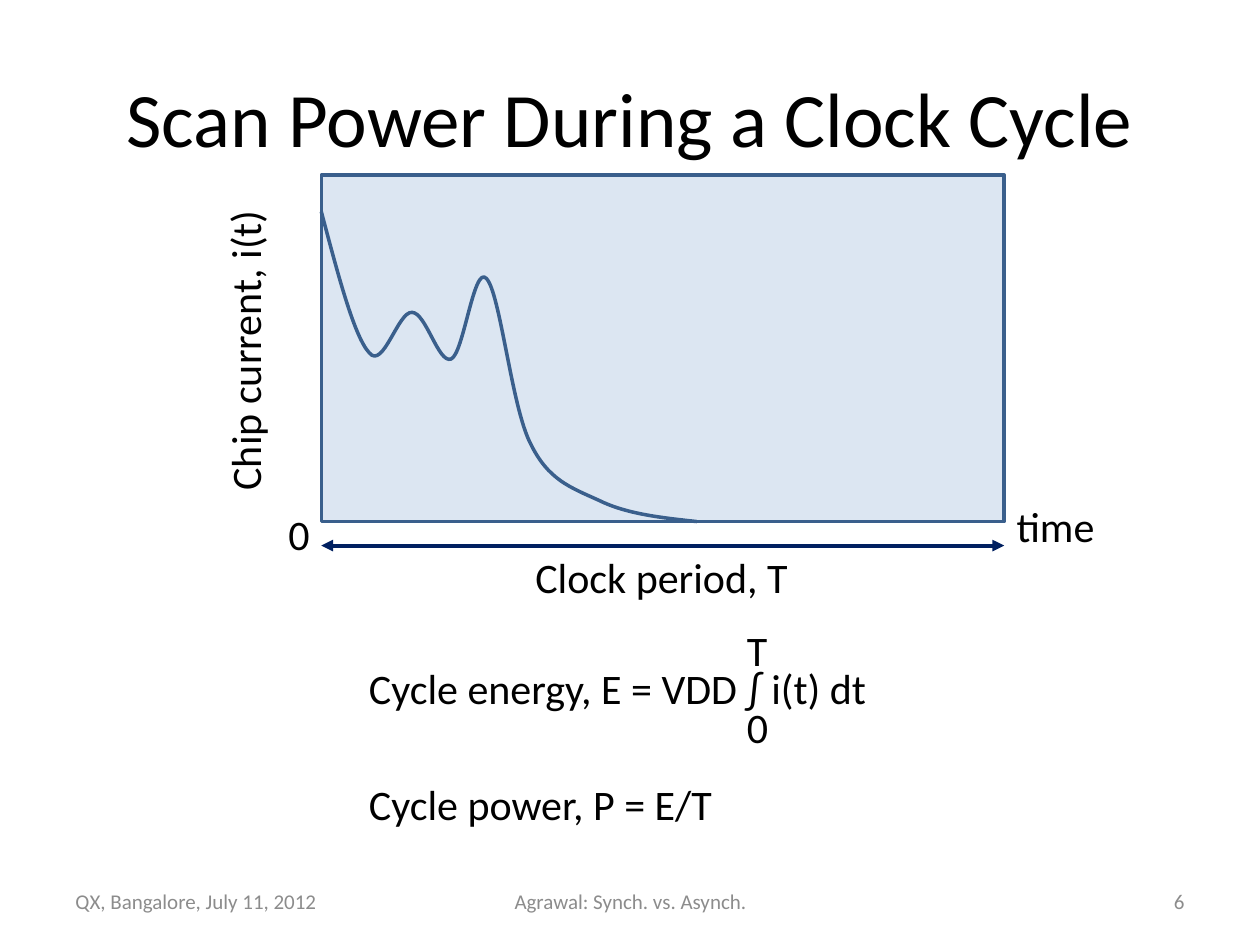
from lxml.etree import SubElement
from pptx import Presentation
from pptx.dml.color import RGBColor
from pptx.enum.shapes import MSO_CONNECTOR, MSO_SHAPE
from pptx.enum.text import MSO_ANCHOR, MSO_AUTO_SIZE, PP_ALIGN
from pptx.oxml.ns import qn
from pptx.util import Pt

PX = 9144  # EMU per px, 100 px to the inch
FONT = "Calibri"
BLACK = RGBColor(0x00, 0x00, 0x00)
GRAY = RGBColor(0x8C, 0x8C, 0x8C)
PALE = RGBColor(0xDC, 0xE6, 0xF2)
BLUE = RGBColor(0x3A, 0x5F, 0x8C)
NAVY = RGBColor(0x00, 0x20, 0x60)


def style(p, size, color, align=PP_ALIGN.LEFT):
    p.font.name, p.font.size, p.font.color.rgb = FONT, Pt(size), color
    p.alignment = align


def add_text(x, y, w, h, lines, size=24, color=BLACK, align=PP_ALIGN.LEFT):
    sp = s.shapes.add_textbox(x * PX, y * PX, w * PX, h * PX)
    tf = sp.text_frame
    tf.text = "\n".join(lines)
    tf.word_wrap = False
    for p in tf.paragraphs:
        style(p, size, color, align)
    return sp


prs = Presentation()
prs.slide_width, prs.slide_height = 1000 * PX, 750 * PX
s = prs.slides.add_slide(prs.slide_layouts[5])

# Title
title = s.shapes.title
title.left, title.top, title.width, title.height = 50 * PX, 30 * PX, 900 * PX, 125 * PX
title.text_frame.text = "Scan Power During a Clock Cycle"
title.text_frame.vertical_anchor = MSO_ANCHOR.MIDDLE
style(title.text_frame.paragraphs[0], 44, BLACK, PP_ALIGN.CENTER)

# Footer
for x, w, text, align in [
    (50, 233, "QX, Bangalore, July 11, 2012", PP_ALIGN.LEFT),
    (342, 317, "Agrawal: Synch. vs. Asynch.", PP_ALIGN.CENTER),
    (717, 233, "6", PP_ALIGN.RIGHT),
]:
    sp = add_text(x, 695, w, 40, [text], 12, GRAY, align)
    sp.text_frame.word_wrap = True
    sp.text_frame.vertical_anchor = MSO_ANCHOR.MIDDLE

# Plot area
plot = s.shapes.add_shape(MSO_SHAPE.RECTANGLE, 255 * PX, 139 * PX, 542 * PX, 275 * PX)
plot.shadow.inherit = False
plot.fill.solid()
plot.fill.fore_color.rgb = PALE
plot.line.color.rgb, plot.line.width = BLUE, Pt(2)

# Current curve: each three points are two handles and an end
builder = s.shapes.build_freeform(255, 168, scale=PX)
builder.add_line_segments([
    (268, 217), (281, 267), (293, 280),
    (304, 294), (316, 247), (327, 248),
    (338, 248), (348, 289), (358, 285),
    (368, 281), (376, 210), (386, 221),
    (397, 232), (406, 323), (421, 352),
    (435, 381), (453, 387), (475, 397),
    (497, 408), (525, 411), (553, 414),
], close=False)
curve = builder.convert_to_shape()
curve.shadow.inherit = False
curve.fill.background()
curve.line.color.rgb, curve.line.width = BLUE, Pt(2)
outline = next(curve.element.iter(qn("a:path")))
segments = outline.findall(qn("a:lnTo"))
for i in range(0, len(segments), 3):
    bezier = SubElement(outline, qn("a:cubicBezTo"))
    for segment in segments[i:i + 3]:
        bezier.append(segment[0])
        outline.remove(segment)

# Clock period arrow
arrow = s.shapes.add_connector(MSO_CONNECTOR.STRAIGHT, 255 * PX, 433 * PX, 797 * PX, 433 * PX)
arrow.line.color.rgb, arrow.line.width = NAVY, Pt(2.25)
ln = arrow.line._get_or_add_ln()
for end in ("a:headEnd", "a:tailEnd"):
    SubElement(ln, qn(end), type="triangle")
SubElement(arrow.element.spPr, qn("a:effectLst"))

# Axis labels
for x, y, w, text, angle in [
    (415, 433, 222, "Clock period, T", 0),
    (797, 392, 83, "time", 0),
    (72, 252, 244, "Chip current, i(t)", 270),
    (219, 399, 37, "0", 0),
]:
    sp = add_text(x, y, w, 50, [text])
    sp.rotation = angle
    sp.text_frame.auto_size = MSO_AUTO_SIZE.SHAPE_TO_FIT_TEXT

# Formulas, with the integral limits indented to the integral sign
sp = add_text(283, 500, 418, 164, [
    "T", "Cycle energy, E = VDD ∫ i(t) dt", "0", "Cycle power, P = E/T"])
sp.text_frame.auto_size = MSO_AUTO_SIZE.SHAPE_TO_FIT_TEXT
upper, energy, lower, power = sp.text_frame.paragraphs
for p in (upper, energy, lower, power):
    p.line_spacing = Pt(22)
for p in (upper, lower):
    p._p.get_or_add_pPr().set("marL", str(300 * PX))
power.space_before = Pt(22)

prs.save("out.pptx")
